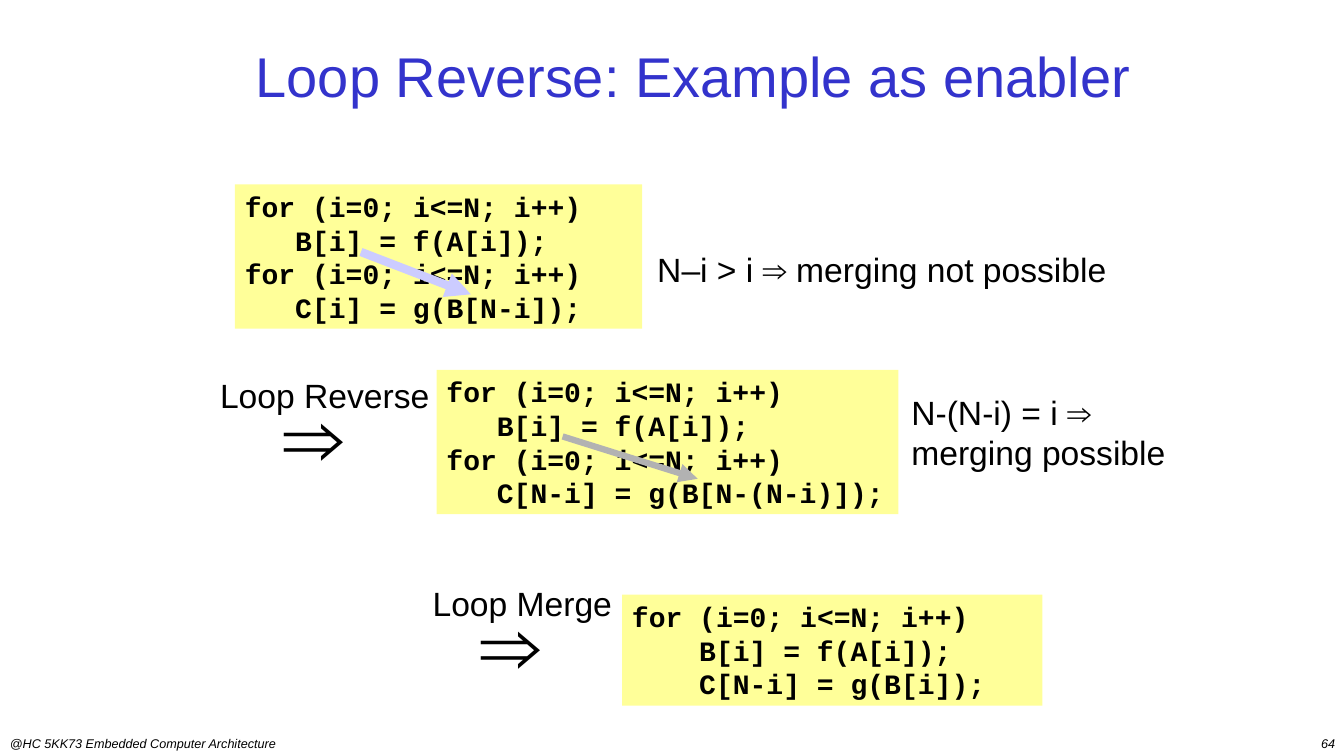
from lxml.etree import SubElement
from pptx import Presentation
from pptx.dml.color import RGBColor
from pptx.enum.shapes import MSO_CONNECTOR as CONNECTOR, MSO_SHAPE as SHAPE
from pptx.enum.text import MSO_ANCHOR as ANCHOR, MSO_AUTO_SIZE as AUTO_SIZE, PP_ALIGN as ALIGN
from pptx.oxml.ns import qn
from pptx.util import Inches, Pt

BLACK = RGBColor(0x00, 0x00, 0x00)
TITLE_BLUE = RGBColor(0x33, 0x33, 0xCC)
CODE_YELLOW = RGBColor(0xFF, 0xFF, 0x99)
BLOCKED_LILAC = RGBColor(0xCC, 0xCC, 0xFF)
ALLOWED_GREY = RGBColor(0xB2, 0xB2, 0xB2)
CODE_CHARACTER = Inches(1 / 6)
LOOP = "for (i=0; i<=N; i++)"


def write_text(frame, text, size=24, font="Arial", color=BLACK, bold=False, italic=False,
               align=ALIGN.LEFT, anchor=ANCHOR.TOP, wrap=True, grow=True):
    frame.word_wrap = wrap
    frame.auto_size = AUTO_SIZE.SHAPE_TO_FIT_TEXT if grow else AUTO_SIZE.NONE
    frame.vertical_anchor = anchor
    for number, line in enumerate(text.split("\n")):
        paragraph = frame.add_paragraph() if number else frame.paragraphs[0]
        paragraph.alignment = align
        run = paragraph.add_run()
        run.text = line
        run.font.name = font
        run.font.size = Pt(size)
        run.font.bold = bold
        run.font.italic = italic
        run.font.color.rgb = color


def add_label(slide, box, text, **text_format):
    label = slide.shapes.add_textbox(*map(Inches, box))
    write_text(label.text_frame, text, **text_format)


def add_note(slide, box, text, **text_format):
    add_label(slide, box, text, anchor=ANCHOR.MIDDLE, wrap=False, **text_format)


def add_code(slide, box, lines, indent):
    panel = slide.shapes.add_shape(SHAPE.RECTANGLE, *map(Inches, box))
    panel.shadow.inherit = False
    panel.fill.solid()
    panel.fill.fore_color.rgb = CODE_YELLOW
    panel.line.fill.background()
    write_text(panel.text_frame, "\n".join(lines), size=20, font="Courier New", bold=True)
    for paragraph in panel.text_frame.paragraphs:
        if paragraph.text != LOOP:
            properties = paragraph._p.get_or_add_pPr()
            properties.set("marL", str(indent * CODE_CHARACTER))
            properties.set("indent", "0")


def add_dependence(slide, start, end, color, width):
    arrow = slide.shapes.add_connector(CONNECTOR.STRAIGHT, *map(Inches, start + end))
    arrow.line.color.rgb = color
    arrow.line.width = Pt(width)
    SubElement(arrow.line._get_or_add_ln(), qn("a:tailEnd"), type="triangle")
    SubElement(arrow._element.spPr, qn("a:effectLst"))


def add_step(slide, left, top, width, name, implies_left):
    add_label(slide, (implies_left, top + 0.09, 1.02, 1.1), "⇒", size=60,
              font="Times New Roman", bold=True, wrap=False)
    add_note(slide, (left, top, width, 0.5), name, align=ALIGN.CENTER)


def main():
    presentation = Presentation()
    presentation.slide_width = Inches(13.33)
    presentation.slide_height = Inches(7.5)
    slide = presentation.slides.add_slide(presentation.slide_layouts[6])

    add_label(slide, (0, 7.25, 4, 0.25), "@HC 5KK73 Embedded Computer Architecture",
              size=9, italic=True, grow=False)
    add_label(slide, (10.56, 7.25, 2.78, 0.25), "64",
              size=9, italic=True, align=ALIGN.RIGHT, grow=False)
    add_label(slide, (2.17, 0.33, 9.4, 0.83), "Loop Reverse: Example as enabler",
              size=40, color=TITLE_BLUE, align=ALIGN.CENTER, anchor=ANCHOR.MIDDLE, grow=False)

    add_code(slide, (2.33, 1.83, 4.04, 1.43),
             [LOOP, "B[i] = f(A[i]);", LOOP, "C[i] = g(B[N-i]);"], indent=3)
    add_dependence(slide, (3.58, 2.5), (4.67, 2.92), BLOCKED_LILAC, 6)
    add_note(slide, (6.42, 2.42, 4.75, 0.5), "N–i > i ⇒ merging not possible")

    add_step(slide, 2.08, 3.67, 2.28, "Loop Reverse", implies_left=2.71)
    add_code(slide, (4.33, 3.67, 4.58, 1.43),
             [LOOP, "B[i] = f(A[i]);", LOOP, "C[N-i] = g(B[N-(N-i)]);"], indent=3)
    add_dependence(slide, (5.58, 4.33), (6.92, 4.75), ALLOWED_GREY, 4.5)
    add_note(slide, (8.94, 3.83, 2.75, 0.91), "N-(N-i) = i ⇒\nmerging possible")

    add_step(slide, 4.19, 5.73, 1.98, "Loop Merge", implies_left=4.67)
    add_code(slide, (6.17, 5.9, 4.17, 1.1),
             [LOOP, "B[i] = f(A[i]);", "C[N-i] = g(B[i]);"], indent=4)

    presentation.save("out.pptx")


if __name__ == "__main__":
    main()
